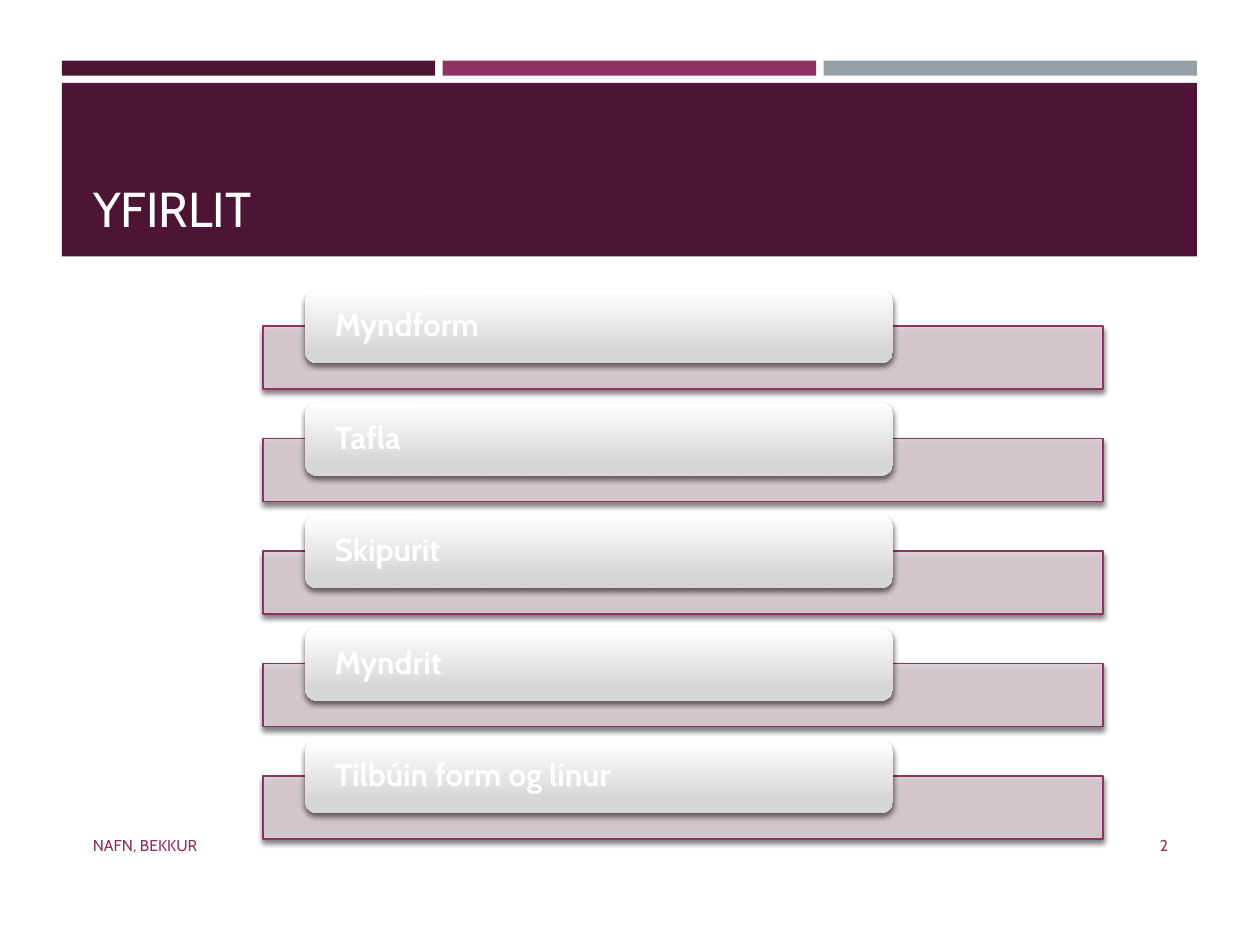
import pptx
import pptx.util
import pptx.dml.color
import pptx.enum.shapes
import pptx.enum.text
import pptx.oxml
import pptx.oxml.ns
from dataclasses import dataclass

Pt = pptx.util.Pt
Shape = pptx.enum.shapes.MSO_SHAPE
Anchor = pptx.enum.text.MSO_ANCHOR
Align = pptx.enum.text.PP_ALIGN
NS = pptx.oxml.ns.nsdecls("a")


@dataclass(frozen=True)
class Theme:
    """Colours, font and type sizes of the slide."""
    dark: str = "4D1434"
    plum: str = "903163"
    gray: str = "969FA7"
    pale: str = "DBCED3"
    white: str = "FFFFFF"
    silver: str = "D6D6D6"
    font: str = "Cabin"
    title: int = 28
    label: int = 18
    small: int = 9


THEME = Theme()


def rgb(code):
    """Turn a hex code into a colour."""
    return pptx.dml.color.RGBColor.from_string(code)


def block(parent, kind, box, fill=None):
    """Add a shape without line or shadow, with a solid fill if given."""
    shape = parent.shapes.add_shape(kind, *map(Pt, box))
    shape.shadow.inherit = False
    shape.line.fill.background()
    if fill:
        shape.fill.solid()
        shape.fill.fore_color.rgb = rgb(fill)
    return shape


def shade(shape):
    """Give a shape a soft shadow below it."""
    effects = shape._element.spPr.find(pptx.oxml.ns.qn("a:effectLst"))
    effects.append(pptx.oxml.parse_xml(
        f'<a:outerShdw {NS} blurRad="{Pt(3)}" dist="{Pt(2)}" dir="5400000" '
        'rotWithShape="0"><a:srgbClr val="000000"><a:alpha val="55000"/>'
        '</a:srgbClr></a:outerShdw>'))


def write(shape, text, size, color, anchor=Anchor.MIDDLE, align=Align.LEFT,
          bold=False):
    """Write one styled run into a shape and return its paragraph."""
    frame = shape.text_frame
    frame.word_wrap = True
    frame.vertical_anchor = anchor
    para = frame.paragraphs[0]
    para.alignment = align
    run = para.add_run()
    run.text = text
    run.font.name = THEME.font
    run.font.size = Pt(size)
    run.font.bold = bold
    run.font.color.rgb = rgb(color)
    return para


def header(slide, box, text):
    """Draw three strips over a band that holds the title."""
    left, top, width, height = box
    gap, thick, drop = 4.3, 8.5, 12.7
    part = (width - 2 * gap) / 3
    for i, color in enumerate((THEME.dark, THEME.plum, THEME.gray)):
        block(slide, Shape.RECTANGLE,
              (left + i * (part + gap), top, part, thick), color)
    block(slide, Shape.RECTANGLE,
          (left, top + drop, width, height - drop), THEME.dark)
    title = slide.shapes.title
    title.left, title.top = Pt(left + 10.7), Pt(top + 19.3)
    title.width, title.height = Pt(width - 19.5), Pt(85)
    write(title, text, THEME.title, THEME.white, Anchor.BOTTOM)
    slide.shapes._spTree.append(title._element)


def entry(group, box, text):
    """Draw a pale bar with a labelled pill over its upper edge."""
    left, top, width, height = box
    rise, thick = 20.7, 36
    bar = block(group, Shape.RECTANGLE,
                (left, top + rise, width, thick), THEME.pale)
    tint = bar._element.spPr.find(
        pptx.oxml.ns.qn("a:solidFill")).find(pptx.oxml.ns.qn("a:srgbClr"))
    tint.append(pptx.oxml.parse_xml(f'<a:alpha {NS} val="90000"/>'))
    bar.line.color.rgb = rgb(THEME.plum)
    bar.line.width = Pt(1)
    shade(bar)

    pill = block(group, Shape.ROUNDED_RECTANGLE,
                 (left + 0.05 * width, top, 0.7 * width, height))
    pill.fill.gradient()
    pill.fill.gradient_angle = 270
    looks = ((0, THEME.white), (0.84, THEME.silver))
    for stop, (place, color) in zip(pill.fill.gradient_stops, looks):
        stop.position = place
        stop.color.rgb = rgb(color)
    shade(pill)
    frame = pill.text_frame
    frame.margin_left = frame.margin_right = Pt(15)
    frame.margin_top = frame.margin_bottom = 0
    para = write(pill, text, THEME.label, THEME.white, bold=True)
    para.line_spacing = 0.9


def agenda(slide, box, names):
    """Stack the entries at an equal step inside the box."""
    left, top, width, height = box
    last = 56.7
    step = (height - last) / (len(names) - 1)
    group = slide.shapes.add_group_shape()
    for i, name in enumerate(names):
        entry(group, (left, top + i * step, width, 41.8), name)


def footer(slide, box, text, number):
    """Place the footer text on the left and the page number on the right."""
    left, top, width, height = box
    side = 60.5
    parts = ((left, 384, text, Align.LEFT),
             (left + width - side, side, number, Align.RIGHT))
    for start, wide, words, align in parts:
        label = slide.shapes.add_textbox(*map(Pt, (start, top, wide, height)))
        write(label, words, THEME.small, THEME.plum, align=align)


def main():
    """Build the slide and save it."""
    deck = pptx.Presentation()
    deck.slide_width, deck.slide_height = Pt(720), Pt(540)
    slide = deck.slides.add_slide(deck.slide_layouts[5])
    header(slide, (35.3, 34.7, 648.7, 111.8), "YFIRLIT")
    agenda(slide, (150.3, 165.7, 480, 313.8),
           ("Myndform", "Tafla", "Skipurit", "Myndrit",
            "Tilbúin form og línur"))
    footer(slide, (46, 468.7, 628.6, 28.8), "NAFN, BEKKUR", "2")
    deck.save("out.pptx")


if __name__ == "__main__":
    main()
